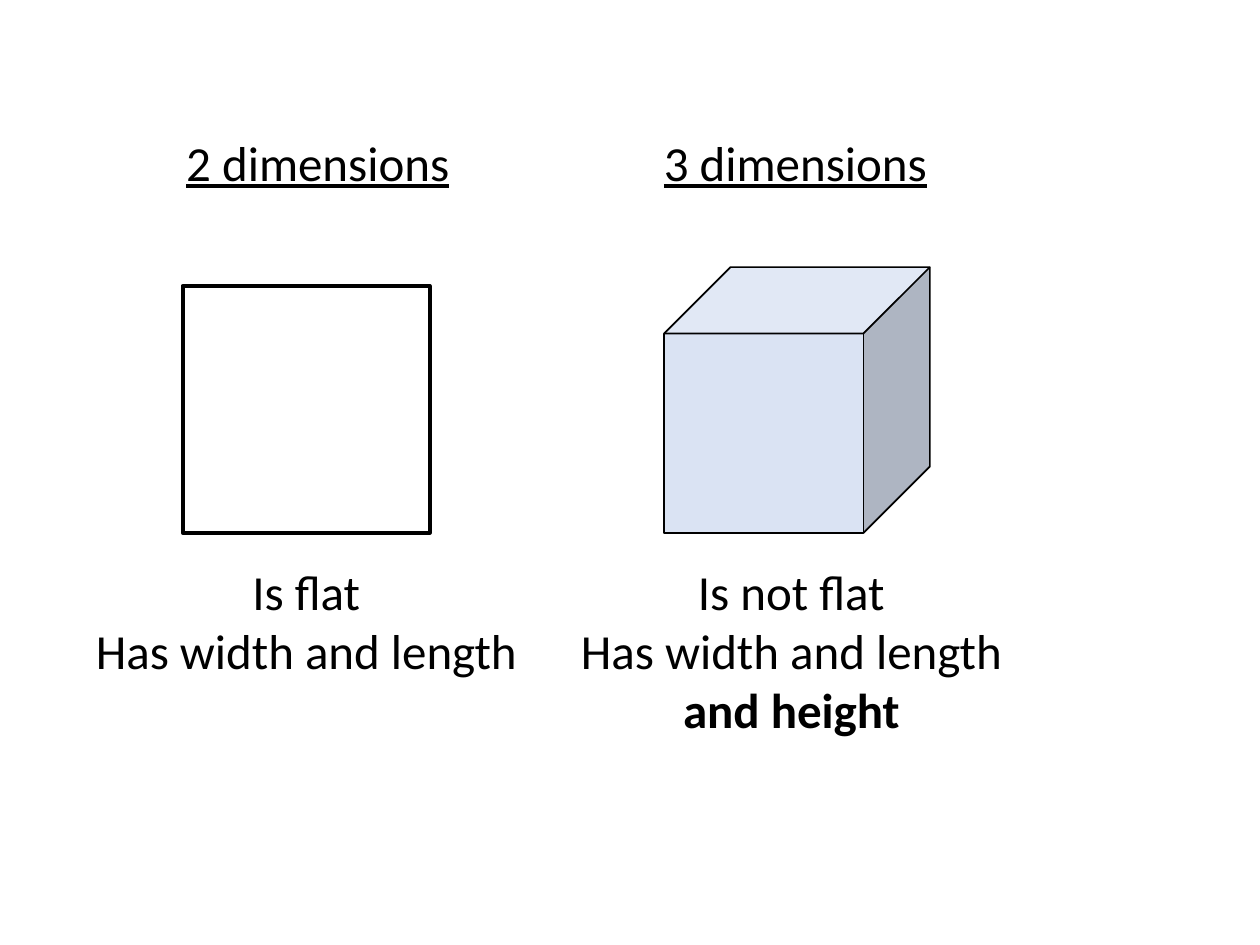
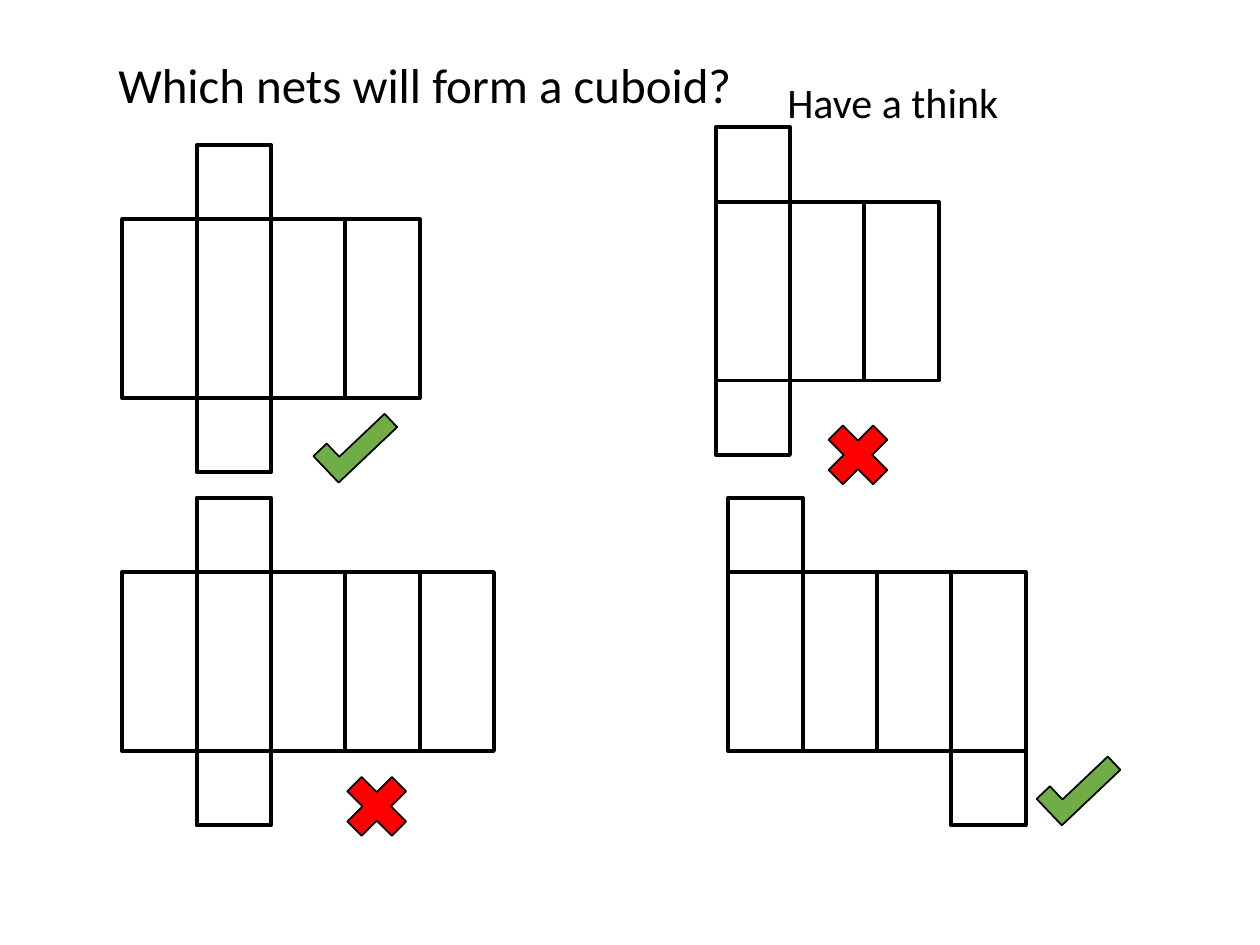
from pptx import Presentation
from pptx.dml.color import RGBColor
from pptx.enum.shapes import MSO_SHAPE
from pptx.enum.text import PP_ALIGN
from pptx.util import Inches, Pt

RECTANGLE = MSO_SHAPE.RECTANGLE
CUBE = MSO_SHAPE.CUBE
TICK = MSO_SHAPE.CORNER
CROSS = MSO_SHAPE.MATH_MULTIPLY
LEFT = PP_ALIGN.LEFT
CENTER = PP_ALIGN.CENTER

FONT = "Calibri"
BLACK = "000000"
WHITE = "FFFFFF"
PALE_BLUE = "DAE3F3"
GREEN = "70AD47"
RED = "FF0000"

FACE_WIDTH = 0.59
FACE_HEIGHT = 1.42


def color(hex_string):
    return RGBColor.from_string(hex_string)


def add_slide(presentation):
    return presentation.slides.add_slide(presentation.slide_layouts[6])


def add_figure(slide, kind, left, top, width, height, fill=WHITE, line_width=2.25):
    shape = slide.shapes.add_shape(
        kind, Inches(left), Inches(top), Inches(width), Inches(height))
    shape.shadow.inherit = False
    shape.fill.solid()
    shape.fill.fore_color.rgb = color(fill)
    shape.line.color.rgb = color(BLACK)
    shape.line.width = Pt(line_width)
    return shape


def add_text(slide, lines, left, top, width, height,
             size=28, underline=False, alignment=LEFT, bold_ending=""):
    box = slide.shapes.add_textbox(
        Inches(left), Inches(top), Inches(width), Inches(height))
    frame = box.text_frame
    frame.word_wrap = True
    frame.text = "\n".join(lines)
    if bold_ending:
        run = frame.paragraphs[-1].add_run()
        run.text = bold_ending
        run.font.bold = True
    for paragraph in frame.paragraphs:
        paragraph.alignment = alignment
        for run in paragraph.runs:
            run.font.name = FONT
            run.font.size = Pt(size)
            run.font.color.rgb = color(BLACK)
            run.font.underline = underline


def add_net(slide, left, top, sides, upper_column, lower_column):
    for column in range(sides):
        add_figure(slide, RECTANGLE, left + column * FACE_WIDTH, top,
                   FACE_WIDTH, FACE_HEIGHT)
    for column, end_top in ((upper_column, top - FACE_WIDTH),
                            (lower_column, top + FACE_HEIGHT)):
        add_figure(slide, RECTANGLE, left + column * FACE_WIDTH, end_top,
                   FACE_WIDTH, FACE_WIDTH)


def add_tick(slide, left, top):
    tick = add_figure(slide, TICK, left, top, 0.64, 0.29, GREEN, 1)
    tick.rotation = 316.5


def add_cross(slide, left, top):
    add_figure(slide, CROSS, left, top, 0.68, 0.68, RED, 1)


def build_dimensions_slide(presentation):
    slide = add_slide(presentation)
    add_text(slide, ["2 dimensions"], 1.38, 1, 2.37, 0.57, underline=True)
    add_text(slide, ["3 dimensions"], 5.17, 1, 2.45, 0.57, underline=True)
    add_figure(slide, RECTANGLE, 1.45, 2.27, 1.96, 1.96)
    add_figure(slide, CUBE, 5.27, 2.12, 2.11, 2.11, PALE_BLUE, 1)
    add_text(slide, ["Is flat", "Has width and length"],
             0.59, 4.41, 3.68, 1.04, alignment=CENTER)
    add_text(slide, ["Is not flat", "Has width and length "],
             4.44, 4.41, 3.68, 1.51, alignment=CENTER, bold_ending="and height")


def build_nets_slide(presentation):
    slide = add_slide(presentation)
    add_net(slide, 0.97, 1.74, sides=4, upper_column=1, lower_column=1)
    add_net(slide, 5.68, 1.6, sides=3, upper_column=0, lower_column=0)
    add_net(slide, 0.97, 4.54, sides=5, upper_column=1, lower_column=1)
    add_net(slide, 5.78, 4.54, sides=4, upper_column=0, lower_column=3)
    add_text(slide, ["Which nets will form a cuboid?"], 0.84, 0.38, 5.72, 0.57)
    add_tick(slide, 2.5, 3.36)
    add_cross(slide, 6.47, 3.27)
    add_cross(slide, 2.65, 6.06)
    add_tick(slide, 8.24, 6.08)
    add_text(slide, ["Have a think"], 6.15, 0.56, 2.29, 0.5, size=24)


def main():
    presentation = Presentation()
    presentation.slide_width = Inches(10)
    presentation.slide_height = Inches(7.5)
    build_dimensions_slide(presentation)
    build_nets_slide(presentation)
    presentation.save("out.pptx")


if __name__ == "__main__":
    main()
